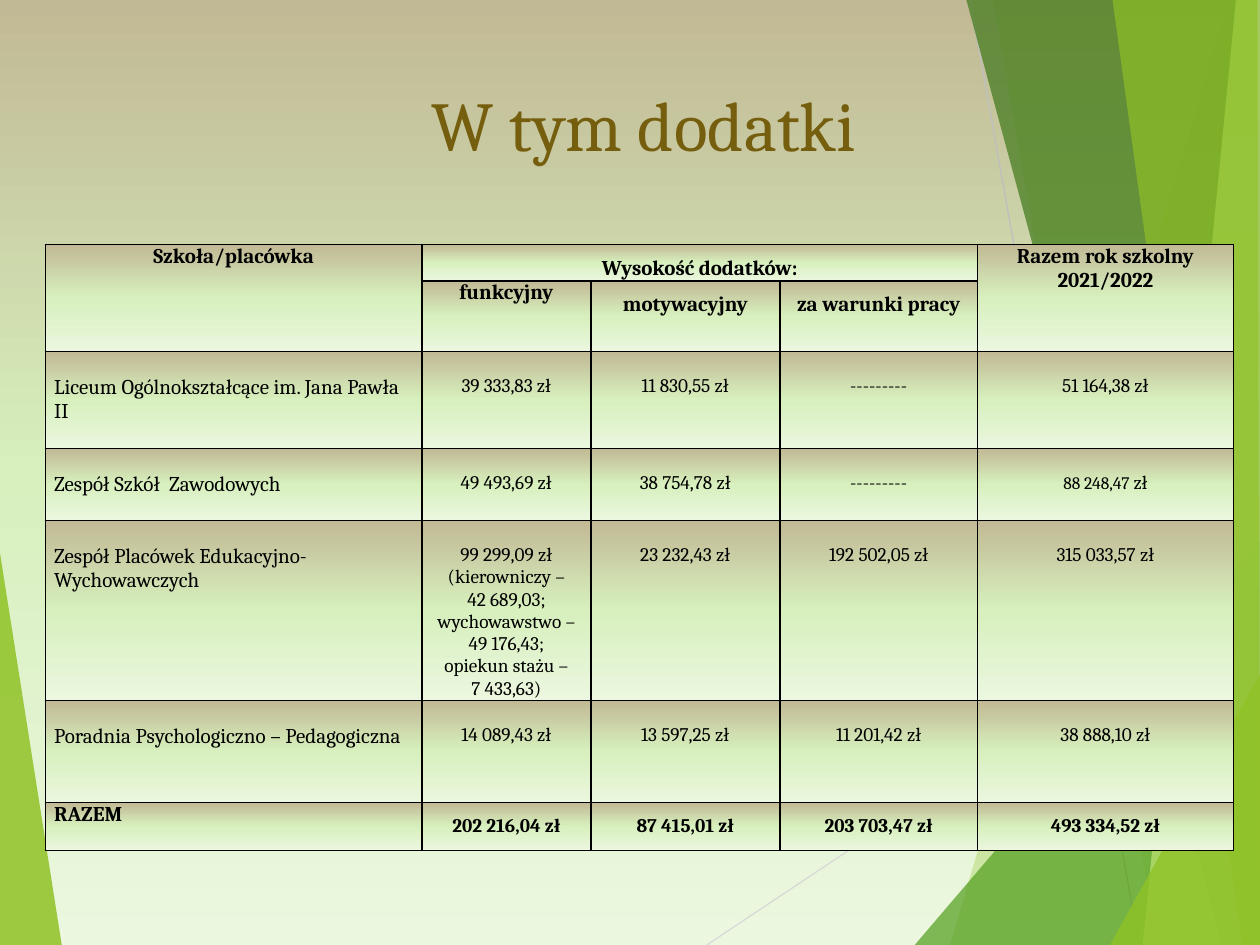
from copy import deepcopy

from lxml import etree
from pptx import Presentation
from pptx import util as u
from pptx.dml.color import RGBColor
from pptx.enum import shapes, text
from pptx.oxml.ns import qn

W, H = 10, 7.5
FONT = "Cambria"
NBSP = chr(160)  # typed as ~ in the table content
GRADIENT = [(0, "C1B995"), (0.5, "D7F0BD"), (1, "EBF7DF")]

# Decoration, back to front: straight lines, then (colour, opacity %, corners)
LINES = [("D9D9D9", (5.61, H), (W, 4.57)), ("BFBFBF", (7.7, 0), (9.04, H))]
FACETS = [
    ("90C226", 85, [(0, 4.39), (0.49, H), (0, H)]),
    ("90C226", 30, [(9.75, 0), (7.54, H), (W, H), (W, 0)]),
    ("90C226", 20, [(7.88, 0), (9.19, H), (W, H), (W, 0)]),
    ("54A021", 72, [(7.26, H), (W, 4.29), (W, H)]),
    ("3F7819", 70, [(7.67, 0), (9.7, H), (W, H), (W, 0)]),
    ("C0E474", 70, [(9.81, 0), (9.07, H), (W, H), (W, 0)]),
    ("90C226", 65, [(8.83, 0), (9.86, H), (W, H), (9.98, 0)]),
    ("90C226", 80, [(8.81, H), (W, 5.35), (W, H)]),
]

TITLE = "W tym dodatki"
COLS = [2.99, 1.34, 1.5, 1.57, 2.03]
ROWS = [0.29, 0.56, 0.77, 0.57, 1.43, 0.81, 0.38]
HEAD_ROWS, TOTAL_ROW = 2, 6
MERGES = [((0, 0), (1, 0)), ((0, 1), (0, 3)), ((0, 4), (1, 4))]
LOOSE_CELLS = [(0, 1), (1, 2), (1, 3)]  # line spacing 1.5
TABLE = [
    ["Szkoła/placówka", "Wysokość dodatków:", "", "", "Razem rok szkolny\n2021/2022"],
    ["", "funkcyjny", "motywacyjny", "za warunki pracy", ""],
    ["Liceum Ogólnokształcące im. Jana Pawła II",
     "39~333,83 zł", "11~830,55 zł", "---------", "51~164,38 zł"],
    ["Zespół Szkół  Zawodowych",
     "49~493,69 zł", "38~754,78 zł", "---------", "88~248,47 zł"],
    ["Zespół Placówek Edukacyjno-Wychowawczych",
     "99~299,09 zł (kierowniczy – 42~689,03; wychowawstwo –\n49~176,43;\n"
     "opiekun stażu – 7~433,63)",
     "23~232,43 zł", "192~502,05 zł", "315~033,57 zł"],
    ["Poradnia Psychologiczno – Pedagogiczna",
     "14~089,43 zł", "13~597,25 zł", "11~201,42 zł", "38~888,10 zł"],
    ["RAZEM", "202~216,04 zł", "87~415,01 zł", "203~703,47 zł", "493~334,52 zł"],
]


def rgb(value):
    return RGBColor.from_string(value)


def paint_gradient(fill, element):
    """Fill from top to bottom with the three stops of GRADIENT."""
    fill.gradient()
    fill.gradient_angle = 270
    stops = element.xpath(".//a:gsLst")[0]
    stops.append(deepcopy(stops[-1]))
    for stop, (position, color) in zip(fill.gradient_stops, GRADIENT):
        stop.position = position
        stop.color.rgb = rgb(color)


def style_paragraph(p, size, color, bold=False, centered=True):
    p.alignment = text.PP_ALIGN.CENTER if centered else text.PP_ALIGN.LEFT
    for r in p.runs:
        r.font.name, r.font.size, r.font.bold = FONT, u.Pt(size), bold
        r.font.color.rgb = rgb(color)


def add_line(s, color, start, end):
    ends = [u.Inches(v) for v in start + end]
    cx = s.shapes.add_connector(shapes.MSO_CONNECTOR.STRAIGHT, *ends)
    cx.line.color.rgb, cx.line.width = rgb(color), u.Pt(0.75)
    etree.SubElement(cx._element.spPr, qn("a:effectLst"))


def add_facet(s, color, opacity, corners):
    first, *rest = [(u.Inches(x), u.Inches(y)) for x, y in corners]
    builder = s.shapes.build_freeform(*first)
    builder.add_line_segments(rest, close=True)
    sp = builder.convert_to_shape()
    sp.shadow.inherit = False
    sp.line.fill.background()
    sp.fill.solid()
    sp.fill.fore_color.rgb = rgb(color)
    clr = sp._element.spPr.xpath("./a:solidFill/a:srgbClr")[0]
    etree.SubElement(clr, qn("a:alpha"), val=str(opacity * 1000))


def add_borders(cell):
    tc_pr = cell._tc.get_or_add_tcPr()
    for i, side in enumerate(("lnL", "lnR", "lnT", "lnB")):
        ln = etree.Element(qn("a:" + side), w=str(u.Pt(1)))
        fill = etree.SubElement(ln, qn("a:solidFill"))
        etree.SubElement(fill, qn("a:srgbClr"), val="000000")
        tc_pr.insert(i, ln)


def fill_cell(cell, row, col, content):
    head, total = row < HEAD_ROWS, row == TOTAL_ROW
    cell.margin_left = cell.margin_right = u.Inches(0.07)
    cell.margin_top = u.Inches(0 if head or total else 0.19)
    cell.margin_bottom = 0
    if total and col:
        cell.vertical_anchor = text.MSO_ANCHOR.MIDDLE
    cell.text_frame.text = content.replace("~", NBSP)
    for p in cell.text_frame.paragraphs:
        style_paragraph(p, 12 if head or col == 0 else 11, "000000",
                        bold=head or total, centered=head or col > 0)
        if (row, col) in LOOSE_CELLS:
            p.line_spacing = 1.5
    paint_gradient(cell.fill, cell._tc)
    add_borders(cell)


def main():
    prs = Presentation()
    prs.slide_width, prs.slide_height = u.Inches(W), u.Inches(H)
    s = prs.slides.add_slide(prs.slide_layouts[5])

    # Background and decoration
    paint_gradient(s.background.fill, s._element)
    for line in LINES:
        add_line(s, *line)
    for facet in FACETS:
        add_facet(s, *facet)

    # Title, in front of the decoration
    title = s.shapes.title
    s.shapes._spTree.append(title._element)
    title.left, title.top, title.width, title.height = (
        u.Inches(v) for v in (0.36, 0.52, 9.5, 0.92))
    title.text_frame.text = TITLE
    title.text_frame.vertical_anchor = text.MSO_ANCHOR.MIDDLE
    style_paragraph(title.text_frame.paragraphs[0], 40, "755E0D")

    # Table of allowances
    box = [u.Inches(v) for v in (0.36, 1.94, sum(COLS), sum(ROWS))]
    table = s.shapes.add_table(len(ROWS), len(COLS), *box).table
    for column, width in zip(table.columns, COLS):
        column.width = u.Inches(width)
    for row, height in zip(table.rows, ROWS):
        row.height = u.Inches(height)
    for first, last in MERGES:
        table.cell(*first).merge(table.cell(*last))
    for i, row in enumerate(TABLE):
        for j, content in enumerate(row):
            fill_cell(table.cell(i, j), i, j, content)

    # Smaller amount in one row total
    p = table.cell(3, 4).text_frame.paragraphs[0]
    amount, unit = p.text.split(" ")
    p.text = amount + " "
    p.add_run().text = unit
    style_paragraph(p, 11, "000000")
    p.runs[0].font.size = u.Pt(10)

    prs.save("out.pptx")


if __name__ == "__main__":
    main()
